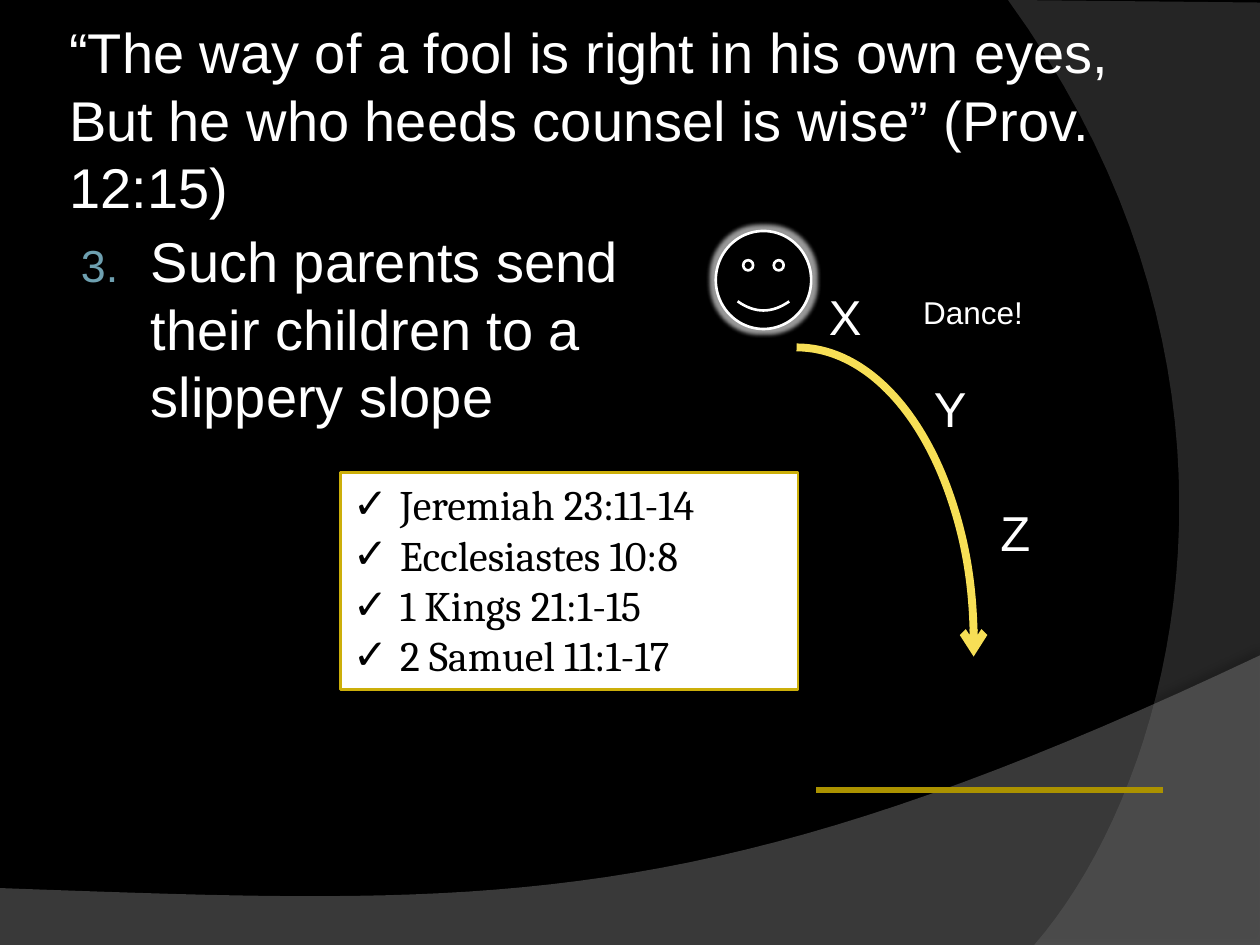
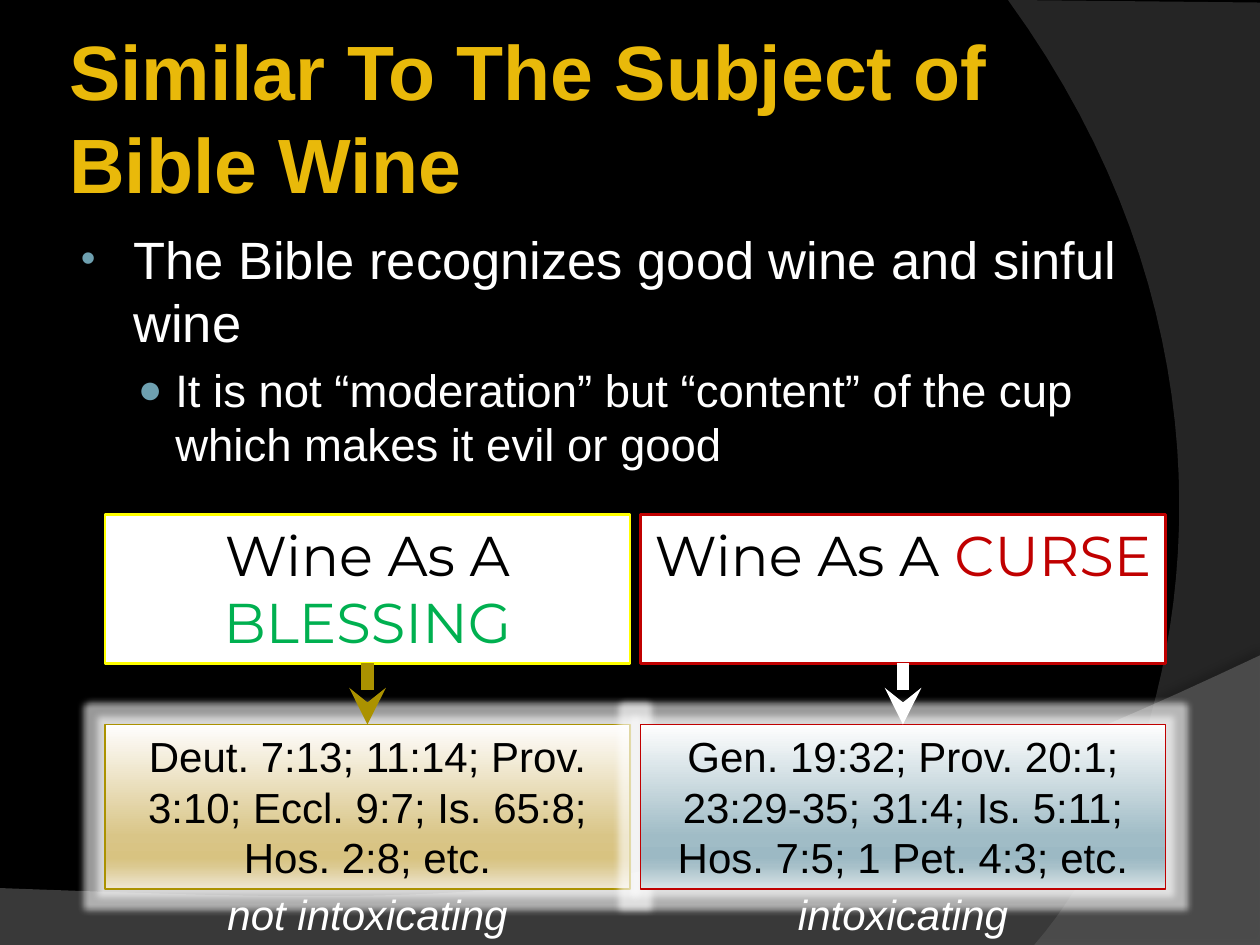
from lxml.etree import SubElement
from pptx import Presentation
from pptx.dml.color import RGBColor
from pptx.enum.shapes import MSO_CONNECTOR, MSO_SHAPE as SHAPE
from pptx.enum.text import MSO_ANCHOR as ANCHOR, MSO_AUTO_SIZE, PP_ALIGN as ALIGN
from pptx.oxml.ns import qn
from pptx.util import Pt

BLACK = RGBColor(0x00, 0x00, 0x00)
WHITE = RGBColor(0xFF, 0xFF, 0xFF)
HILL_GRAY = RGBColor(0x7F, 0x7F, 0x7F)
EDGE_GRAY = RGBColor(0x5E, 0x5E, 0x5E)
TITLE_GOLD = RGBColor(0xE9, 0xB9, 0x0A)
DARK_GOLD = RGBColor(0xAB, 0x92, 0x00)
BOX_GOLD = RGBColor(0xCC, 0xAF, 0x0A)
SLOPE_YELLOW = RGBColor(0xF7, 0xDF, 0x56)
YELLOW = RGBColor(0xFF, 0xFF, 0x00)
GREEN = RGBColor(0x00, 0xB0, 0x50)
RED = RGBColor(0xC0, 0x00, 0x00)
BULLET_BLUE = RGBColor(0x6E, 0xA0, 0xB0)
GOLD_FADE = [(0, RGBColor(0xFF, 0xFE, 0xFE)), (68, RGBColor(0xD9, 0xC5, 0x87)),
             (81, RGBColor(0xD8, 0xC3, 0x81)), (86, RGBColor(0xDB, 0xC9, 0x90)),
             (100, RGBColor(0xEF, 0xE7, 0xD3))]
BLUE_FADE = [(0, RGBColor(0xFE, 0xFE, 0xFE)), (68, RGBColor(0xA0, 0xBC, 0xC6)),
             (81, RGBColor(0x9C, 0xB9, 0xC4)), (86, RGBColor(0xA7, 0xC0, 0xC9)),
             (100, RGBColor(0xDA, 0xE4, 0xE7))]


def sub(parent, tag, **attrs):
    return SubElement(parent, qn(f"a:{tag}"), {k: str(v) for k, v in attrs.items()})


def bezier(p0, p1, p2, p3, steps=40):
    """Points along a cubic curve, without its start."""
    for i in range(1, steps + 1):
        t = i / steps
        u = 1 - t
        yield tuple(u**3 * a + 3 * u * u * t * b + 3 * u * t * t * c + t**3 * d
                    for a, b, c, d in zip(p0, p1, p2, p3))


class Deck:
    def __init__(self):
        self.prs = Presentation()
        self.prs.slide_width, self.prs.slide_height = Pt(720), Pt(540)
        fill = self.prs.slide_master.background.fill
        fill.solid()
        fill.fore_color.rgb = BLACK
        self.s = None

    def new_slide(self):
        self.s = self.prs.slides.add_slide(self.prs.slide_layouts[1])

    def place(self, sp, left, top, width, height):
        sp.left, sp.top, sp.width, sp.height = map(Pt, (left, top, width, height))

    def style(self, p, size, color=WHITE, name="Arial", bold=False, italic=False):
        """Format a paragraph and its runs alike."""
        for font in (p.font, *(r.font for r in p.runs)):
            font.size, font.name = Pt(size), name
            font.bold, font.italic = bold, italic
            font.color.rgb = color

    def bullet(self, p, indent, hang, mark, scale=100, color=None):
        """Give a paragraph a bullet character, or a number if mark is an int."""
        pPr = p._p.get_or_add_pPr()
        pPr.set("marL", str(Pt(indent)))
        pPr.set("indent", str(-Pt(hang)))
        if color is not None:
            sub(sub(pPr, "buClr"), "srgbClr", val=color)
        sub(pPr, "buSzPct", val=scale * 1000)
        sub(pPr, "buFont", typeface="Arial")
        if isinstance(mark, int):
            sub(pPr, "buAutoNum", type="arabicPeriod", startAt=mark)
        else:
            sub(pPr, "buChar", char=mark)

    def effect(self, sp, tag, color, alpha, **attrs):
        effects = sp._element.spPr.find(qn("a:effectLst"))
        clr = sub(sub(effects, tag, **attrs), "srgbClr", val=color)
        sub(clr, "alpha", val=alpha * 1000)

    def glow(self, sp, radius):
        self.effect(sp, "glow", WHITE, 60, rad=Pt(radius))

    def arrow(self, line, kind):
        sub(line._get_or_add_ln(), "tailEnd", type=kind)

    def backdrop(self, start, points, color, opacity, shadow_alpha, direction):
        """Draw a translucent outline and move it to the slide master."""
        fb = self.s.shapes.build_freeform(*map(Pt, start))
        fb.add_line_segments([(Pt(x), Pt(y)) for x, y in points])
        sp = fb.convert_to_shape()
        sp.shadow.inherit = False
        sp.line.fill.background()
        sp.fill.solid()
        sp.fill.fore_color.rgb = color
        clr = sp._element.spPr.find(qn("a:solidFill")).find(qn("a:srgbClr"))
        sub(clr, "alpha", val=opacity * 1000)
        self.effect(sp, "outerShdw", BLACK, shadow_alpha, blurRad=Pt(4),
                    dist=Pt(4), dir=direction * 60000)
        self.prs.slide_master.shapes[0]._element.addprevious(sp._element)

    def title(self, text, top, width, size, color, bold=False, bottom_inset=3.6):
        sp = self.s.shapes.title
        self.place(sp, 36, top, width, 90)
        tf = sp.text_frame
        tf.auto_size, tf.vertical_anchor = MSO_AUTO_SIZE.NONE, ANCHOR.MIDDLE
        tf.margin_left = tf.margin_right = tf.margin_top = Pt(3.6)
        tf.margin_bottom = Pt(bottom_inset)
        p = tf.paragraphs[0]
        p.text, p.alignment = text, ALIGN.LEFT
        self.style(p, size, color, bold=bold)

    def body(self, width, height, items):
        """Fill the body with (text, size, indent, hang, mark, scale) items, one per level."""
        sp = self.s.placeholders[1]
        self.place(sp, 36, 126, width, height)
        tf = sp.text_frame
        tf.auto_size = MSO_AUTO_SIZE.NONE
        for level, (text, size, indent, hang, mark, scale) in enumerate(items):
            p = tf.add_paragraph() if level else tf.paragraphs[0]
            p.text, p.level = text, level
            self.bullet(p, indent, hang, mark, scale, BULLET_BLUE)
            self.style(p, size)

    def shape(self, kind, left, top, width, height, line, weight, fill=None):
        """Add a preset shape; fill is None, a colour or a list of gradient stops."""
        sp = self.s.shapes.add_shape(kind, *map(Pt, (left, top, width, height)))
        sp.shadow.inherit = False
        sp.line.color.rgb, sp.line.width = line, Pt(weight)
        if fill is None:
            sp.fill.background()
        elif isinstance(fill, RGBColor):
            sp.fill.solid()
            sp.fill.fore_color.rgb = fill
        else:
            sp.fill.gradient()
            sp.fill.gradient_angle = 270
            stops = sp._element.spPr.find(qn("a:gradFill")).find(qn("a:gsLst"))
            stops[:] = []
            for pos, color in fill:
                sub(sub(stops, "gs", pos=pos * 1000), "srgbClr", val=color)
        return sp

    def box(self, left, top, width, height, paragraphs, size, name, align,
            line, weight, fill=WHITE, mark=None):
        """Add a text rectangle, with a bullet on each paragraph if mark is given."""
        sp = self.shape(SHAPE.RECTANGLE, left, top, width, height, line, weight, fill)
        tf = sp.text_frame
        tf.word_wrap, tf.vertical_anchor = True, ANCHOR.TOP
        for i, text in enumerate(paragraphs):
            p = tf.add_paragraph() if i else tf.paragraphs[0]
            p.text, p.alignment = text, align
            if mark:
                self.bullet(p, 27, 27, mark)
            self.style(p, size, BLACK, name)
        return sp

    def label(self, text, left, top, width, height, size, align=ALIGN.LEFT, italic=False):
        sp = self.s.shapes.add_textbox(*map(Pt, (left, top, width, height)))
        sp.text_frame.word_wrap = False
        p = sp.text_frame.paragraphs[0]
        p.text, p.alignment = text, align
        self.style(p, size, italic=italic)

    def line(self, x1, y1, x2, y2, color, weight):
        c = self.s.shapes.add_connector(MSO_CONNECTOR.STRAIGHT, *map(Pt, (x1, y1, x2, y2)))
        c.line.color.rgb, c.line.width = color, Pt(weight)
        sub(c._element.spPr, "effectLst")
        return c


def add_backdrop(deck):
    hill = [(0, 540.5), (720, 540.5), (720, 374.5),
            *bezier((720, 374.5), (402.5, 525), (281.5, 517.5), (0, 507.5))]
    edge = [(720, 540), (591, 540),
            *bezier((591, 540), (673, 445.5), (733, 216), (576, 0)), (720, 1.5)]
    deck.backdrop((0, 507.5), hill, HILL_GRAY, 45, 35, 270)
    deck.backdrop((720, 1.5), edge, EDGE_GRAY, 40, 45, 180)


def slippery_slope(deck):
    deck.new_slide()
    add_backdrop(deck)
    deck.title("“The way of a fool is right in his own eyes, But he who heeds counsel "
               "is wise” (Prov. 12:15)", 42, 636, 32, WHITE, bottom_inset=42)
    deck.body(588, 356, [("Such parents send\vtheir children to a\vslippery slope",
                          32, 43, 40, 3, 80)])
    deck.line(466.5, 451.5, 664.5, 451.5, DARK_GOLD, 3)
    for text, left, top in (("X", 466.5, 160), ("Y", 526.5, 212.5), ("Z", 564.5, 283.5)):
        deck.label(text, left, top, 38, 78, 28)
    face = deck.shape(SHAPE.SMILEY_FACE, 409, 132, 54.5, 56, WHITE, 1.5, BLACK)
    deck.glow(face, 5)
    slope = deck.shape(SHAPE.ARC, 354, 198.5, 202.5, 339, SLOPE_YELLOW, 4.5)
    slope.adjustments[0], slope.adjustments[1] = 162, 2.44
    deck.arrow(slope.line, "arrow")
    deck.box(194.5, 270, 261.5, 124,
             ["Jeremiah 23:11-14", "Ecclesiastes 10:8", "1 Kings 21:1-15", "2 Samuel 11:1-17"],
             24, "Cambria", ALIGN.LEFT, BOX_GOLD, 1.5, mark="✓")
    deck.label("Dance!", 520.5, 164, 72, 29, 18)


def bible_wine(deck):
    deck.new_slide()
    deck.title("Similar To The Subject of Bible Wine", 21.5, 588, 44, TITLE_GOLD, bold=True)
    deck.body(648, 174, [
        ("The Bible recognizes good wine and sinful wine", 30, 33, 30, "•", 80),
        ("It is not “moderation” but “content” of the cup which makes it evil or good",
         26, 57, 21.5, "●", 90)])
    columns = [
        ("BLESSING", GREEN, YELLOW, DARK_GOLD, DARK_GOLD, GOLD_FADE, "not intoxicating",
         "Deut. 7:13; 11:14; Prov. 3:10; Eccl. 9:7; Is. 65:8; Hos. 2:8; etc."),
        ("CURSE", RED, RED, WHITE, RED, BLUE_FADE, "intoxicating",
         "Gen. 19:32; Prov. 20:1; 23:29-35; 31:4; Is. 5:11; Hos. 7:5; 1 Pet. 4:3; etc."),
    ]
    width = 300
    for i, (word, color, border, arrow, edge, fade, verdict, verses) in enumerate(columns):
        left = 60 + i * 306
        mid = left + width / 2
        head = deck.box(left, 294, width, 85, ["Wine As A "], 32, "Montserrat",
                        ALIGN.CENTER, border, 1.5)
        r = head.text_frame.paragraphs[0].add_run()
        r.text = word
        r.font.size, r.font.name = Pt(32), "Montserrat"
        r.font.color.rgb = color
        refs = deck.box(left, 414, width, 94, [verses], 24, "Arial", ALIGN.CENTER,
                        edge, 0.75, fade)
        deck.glow(refs, 8)
        c = deck.line(mid, 379, mid, 414, arrow, 7)
        c.begin_connect(head, 2)
        c.end_connect(refs, 0)
        deck.arrow(c.line, "stealth")
        deck.label(verdict, mid - 88, 504, 176, 36, 24, ALIGN.CENTER, italic=True)


def main():
    deck = Deck()
    slippery_slope(deck)
    bible_wine(deck)
    deck.prs.save("out.pptx")


if __name__ == "__main__":
    main()
